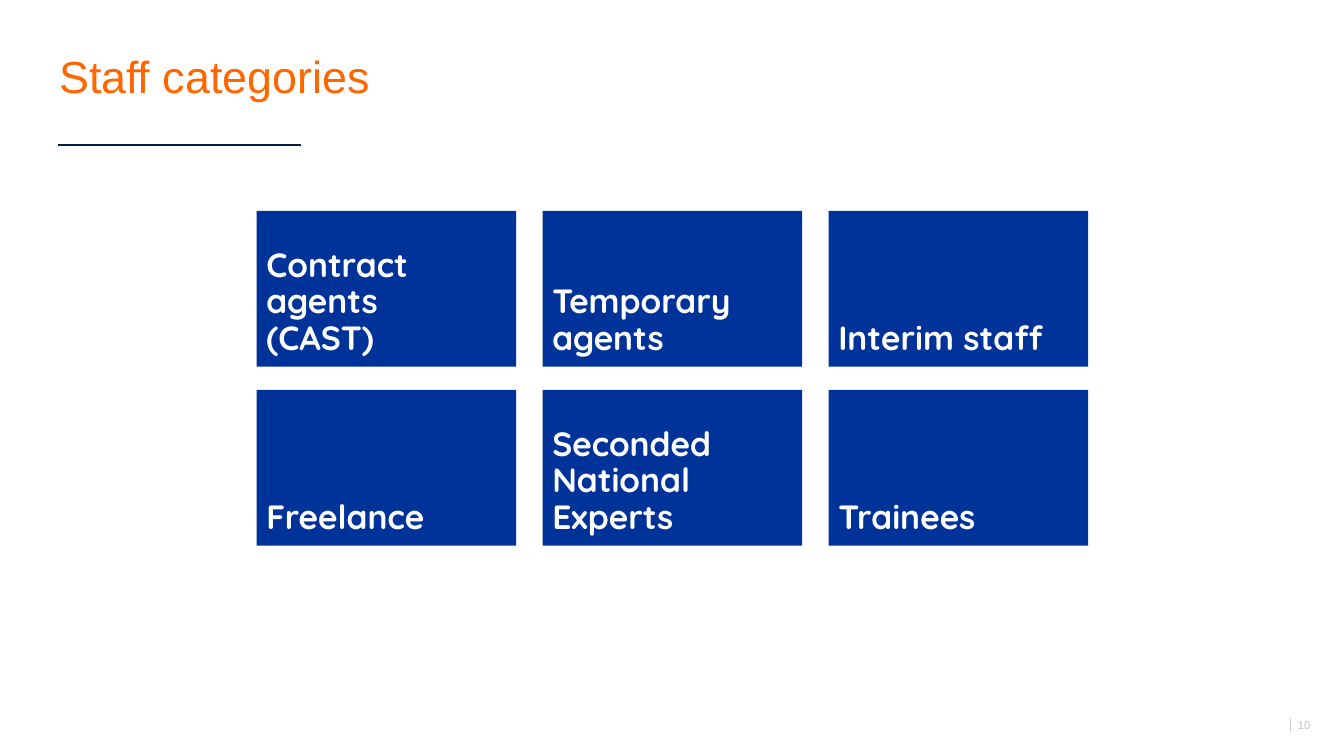
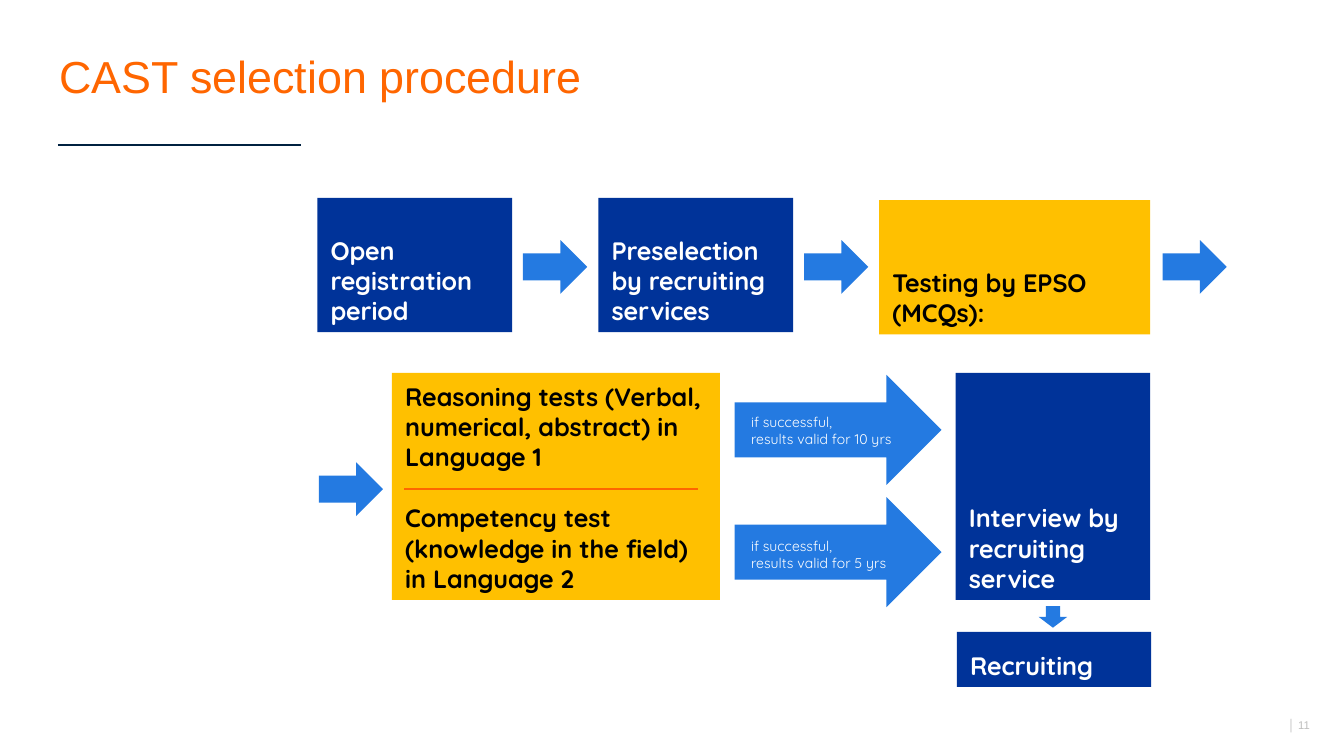
from lxml import etree
from pptx import Presentation
from pptx.dml.color import RGBColor
from pptx.enum.shapes import MSO_CONNECTOR, MSO_SHAPE
from pptx.enum.text import MSO_ANCHOR, MSO_AUTO_SIZE, PP_ALIGN
from pptx.oxml.ns import qn
from pptx.util import Pt

COLORS = {
    "title": "FF6600", "rule": "002140", "page": "BFBFBE",
    "navy": "003399", "gold": "FFC000", "arrow": "247AE1",
    "split": "FE6600", "white": "FFFFFF", "black": "000000",
}
HEAD, BODY = "Arial", "Quicksand"

STAFF = [
    [["Contract agents", "(CAST)"], ["Temporary agents"], ["Interim staff"]],
    [["Freelance"], ["Seconded National Experts"], ["Trainees"]],
]
# Text, fill, text colour, (left, top, width, height)
STEPS = [
    (["Open registration period"], "navy", "white", (170, 106, 104.4, 72)),
    (["Preselection by recruiting services"], "navy", "white",
     (320.5, 106, 104.4, 72)),
    (["Testing by EPSO (MCQs):"], "gold", "black", (471, 107.2, 145.2, 72)),
    (["Reasoning tests (Verbal, numerical, abstract) in Language 1",
      "Competency test (knowledge in the field) in Language 2"],
     "gold", "black", (210, 199.7, 175.7, 121.7)),
    (["Interview by recruiting service"], "navy", "white",
     (512, 199.7, 104.2, 121.7)),
    (["Recruiting"], "navy", "white", (512.6, 338.5, 104.2, 29.5)),
]
SMALL = [(280.2, 128.6), (430.8, 128.6), (622.8, 128.6), (170.8, 247.7)]
# Caption, caption top, arrow top
RESULTS = [
    ("if successful, \nresults valid for 10 yrs", 218.2, 200.8),
    ("if successful, \nresults valid for 5 yrs", 284.4, 266.3),
]


def rgb(name):
    return RGBColor.from_string(COLORS[name])


def write(frame, texts, size, color, face=BODY, bold=False, lead=None, gap=0):
    frame.word_wrap = True
    for i, text in enumerate(texts):
        para = frame.paragraphs[0] if i == 0 else frame.add_paragraph()
        para.text = text
        para.alignment = PP_ALIGN.LEFT
        if lead:
            para.line_spacing = Pt(lead)
        if i and gap:
            para.space_before = Pt(gap)
        font = para.font
        font.name, font.size, font.bold = face, Pt(size), bold
        font.color.rgb = rgb(color)


def add_block(slide, kind, place, fill):
    shape = slide.shapes.add_shape(kind, *map(Pt, place))
    shape.shadow.inherit = False
    shape.fill.solid()
    shape.fill.fore_color.rgb = rgb(fill)
    shape.line.fill.background()
    return shape


def add_card(slide, place, texts, fill, color, size, inset=None, **style):
    """Add a filled box with bold text resting on its bottom edge."""
    frame = add_block(slide, MSO_SHAPE.RECTANGLE, place, fill).text_frame
    frame.vertical_anchor = MSO_ANCHOR.BOTTOM
    if inset:
        frame.margin_left = frame.margin_right = Pt(inset)
        frame.margin_top = frame.margin_bottom = Pt(inset)
    write(frame, texts, size, color, bold=True, **style)


def add_line(slide, left, right, y, color, width):
    line = slide.shapes.add_connector(
        MSO_CONNECTOR.STRAIGHT, Pt(left), Pt(y), Pt(right), Pt(y))
    line.line.color.rgb = rgb(color)
    line.line.width = Pt(width)
    etree.SubElement(line._element.spPr, qn("a:effectLst"))


def add_text(slide, place, text, size, color, face=BODY):
    frame = slide.shapes.add_textbox(*map(Pt, place)).text_frame
    write(frame, [text], size, color, face)
    return frame


def add_slide(deck, name, page):
    """Start a slide with its title, rule and page number."""
    slide = deck.slides.add_slide(deck.slide_layouts[5])
    title = slide.shapes.title
    title.left, title.top, title.width, title.height = map(
        Pt, (24.5, 13.7, 587.5, 53.3))
    frame = title.text_frame
    frame.auto_size = MSO_AUTO_SIZE.NONE
    frame.vertical_anchor = MSO_ANCHOR.MIDDLE
    write(frame, [name], 24, "title", HEAD)
    add_line(slide, 31, 161.5, 77.7, "rule", 0.75)
    foot = add_text(slide, (671.8, 372.4, 48.2, 32.4), f"│ {page}", 6,
                    "page", HEAD)
    foot.vertical_anchor = MSO_ANCHOR.MIDDLE
    foot.paragraphs[0].alignment = PP_ALIGN.CENTER
    return slide


def build_staff(deck):
    slide = add_slide(deck, "Staff categories", 10)
    left, top, wide, high = 137.5, 113, 139, 83.5
    for r, row in enumerate(STAFF):
        for c, texts in enumerate(row):
            place = (left + c * 153.2, top + r * 95.9, wide, high)
            add_card(slide, place, texts, "navy", "white", 18,
                     inset=5.2, lead=19.5)


def build_steps(deck):
    slide = add_slide(deck, "CAST selection procedure", 11)
    for texts, fill, color, place in STEPS:
        add_card(slide, place, texts, fill, color, 13.5, gap=16.5)
    for left, top in SMALL:
        add_block(slide, MSO_SHAPE.RIGHT_ARROW, (left, top, 34.4, 28.8),
                  "arrow")
    for text, top, tip in RESULTS:
        add_block(slide, MSO_SHAPE.RIGHT_ARROW, (393.6, tip, 110.8, 59),
                  "arrow")
        add_text(slide, (395.3, top, 98.6, 25.2), text, 7.5, "white")
    add_block(slide, MSO_SHAPE.DOWN_ARROW, (556.5, 324.8, 15.2, 11.5), "arrow")
    add_line(slide, 216.5, 373.8, 262, "split", 1.5)


def main():
    deck = Presentation()
    deck.slide_width, deck.slide_height = Pt(720), Pt(405)
    build_staff(deck)
    build_steps(deck)
    deck.save("out.pptx")


if __name__ == "__main__":
    main()
